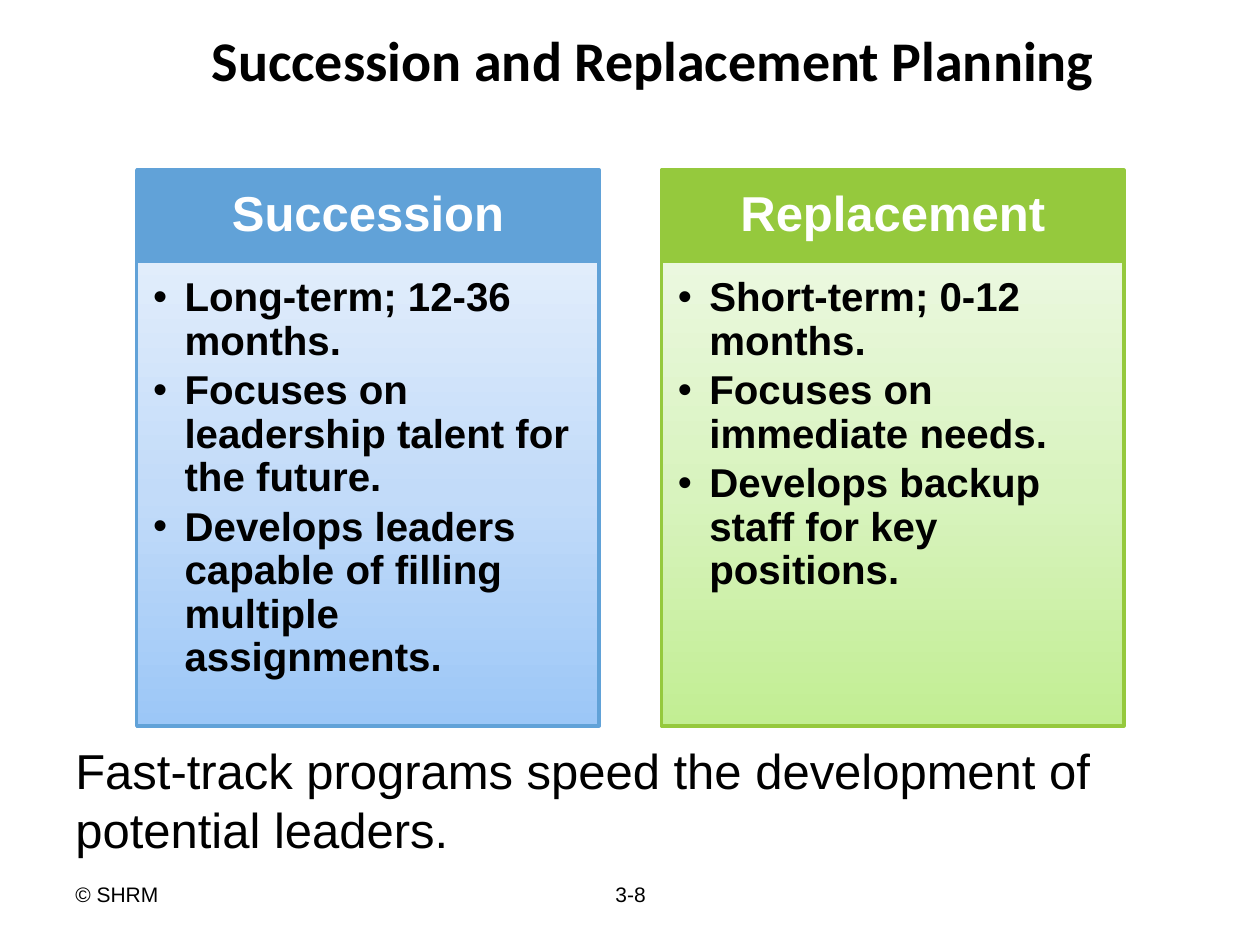
from copy import deepcopy

from pptx import Presentation
from pptx.dml.color import RGBColor
from pptx.enum.text import MSO_ANCHOR as Anchor, MSO_AUTO_SIZE as AutoSize, PP_ALIGN as Align
from pptx.util import Inches, Pt


def color(hex_string):
    return RGBColor.from_string(hex_string)


def write_text(shape, box, lines, font, paragraph_format={}, frame_format={}):
    shape.left, shape.top, shape.width, shape.height = [Inches(value) for value in box]
    frame = shape.text_frame
    frame.text = "\n".join(lines)
    for name, value in {"word_wrap": True, "auto_size": AutoSize.NONE, **frame_format}.items():
        setattr(frame, name, value)
    for paragraph in frame.paragraphs:
        for name, value in {"space_before": Pt(0), **paragraph_format}.items():
            setattr(paragraph, name, value)
        for name, value in {"name": "Arial", "bold": False, **font}.items():
            setattr(paragraph.font, name, value)
        paragraph.font.color.rgb = color(font_color[shape.name] if shape.name in font_color else "000000")


font_color = {}
presentation = Presentation()
presentation.slide_width = Inches(10)
presentation.slide_height = Inches(7.5)
slide = presentation.slides.add_slide(presentation.slide_layouts.get_by_name("Comparison"))
placeholders = {shape.placeholder_format.idx: shape for shape in slide.placeholders}

write_text(
    slide.shapes.title, (1.58, 0, 8.17, 1), ["Succession and Replacement Planning"],
    {"name": "Calibri", "size": Pt(32), "bold": True},
    {"alignment": Align.LEFT, "line_spacing": 0.9},
    {"vertical_anchor": Anchor.MIDDLE},
)

heading_frame = {
    "vertical_anchor": Anchor.MIDDLE,
    "margin_left": Inches(0.22), "margin_right": Inches(0.22),
    "margin_top": Inches(0.12), "margin_bottom": Inches(0.12),
}
list_frame = {
    "vertical_anchor": Anchor.TOP,
    "margin_left": Inches(0.13), "margin_right": Inches(0.18),
    "margin_top": Inches(0.13), "margin_bottom": Inches(0.2),
}
columns = [
    ("Succession", "61A2D8", ["9CC7F7", "C2DBF9", "E1EDFB"], [
        "Long-term; 12-36 months.",
        "Focuses on leadership talent for the future.",
        "Develops leaders capable of filling multiple assignments.",
    ]),
    ("Replacement", "95C93D", ["C2EE93", "D8F3BE", "EBF8DF"], [
        "Short-term; 0-12 months.",
        "Focuses on immediate needs.",
        "Develops backup staff for key positions.",
    ]),
]
for index, (heading_text, accent, gradient, items) in enumerate(columns):
    left = 1.085 + index * 4.165
    heading = placeholders[1 + 2 * index]
    bullet_list = placeholders[2 + 2 * index]
    font_color[heading.name] = "FFFFFF"

    write_text(
        heading, (left, 1.35, 3.67, 0.72), [heading_text], {"size": Pt(28), "bold": True},
        {"alignment": Align.CENTER, "line_spacing": 0.9}, heading_frame,
    )
    heading.fill.solid()
    heading.fill.fore_color.rgb = color(accent)

    write_text(
        bullet_list, (left, 2.07, 3.67, 3.69), items, {"size": Pt(23), "bold": True},
        {"line_spacing": 0.9, "space_after": Pt(3.5)}, list_frame,
    )
    for paragraph in bullet_list.text_frame.paragraphs:
        properties = paragraph._p.get_or_add_pPr()
        properties.set("marL", str(Inches(0.25)))
        properties.set("indent", str(-Inches(0.25)))

    bullet_list.fill.gradient()
    bullet_list.fill.gradient_angle = 90
    stop_list = bullet_list._element.spPr.xpath("./a:gradFill/a:gsLst")[0]
    stop_list.insert(1, deepcopy(stop_list[0]))
    for stop, position, stop_color in zip(bullet_list.fill.gradient_stops, (0, 0.5, 1), gradient):
        stop.position = position
        stop.color.rgb = color(stop_color)
        for change in stop_list.xpath(".//a:srgbClr/*"):
            change.getparent().remove(change)

    for panel in (heading, bullet_list):
        panel.line.color.rgb = color(accent)
        panel.line.width = Pt(2)

for box, text, size, alignment in [
    ((0.5, 5.83, 8.92, 1.03), "Fast-track programs speed the development of potential leaders.", 28, Align.LEFT),
    ((3.42, 6.95, 3.17, 0.4), "3-8", 12, Align.CENTER),
    ((0.5, 6.95, 2.33, 0.4), "© SHRM", 12, Align.LEFT),
]:
    text_box = slide.shapes.add_textbox(0, 0, 0, 0)
    write_text(text_box, box, [text], {"size": Pt(size)}, {"alignment": alignment})

presentation.save("out.pptx")
